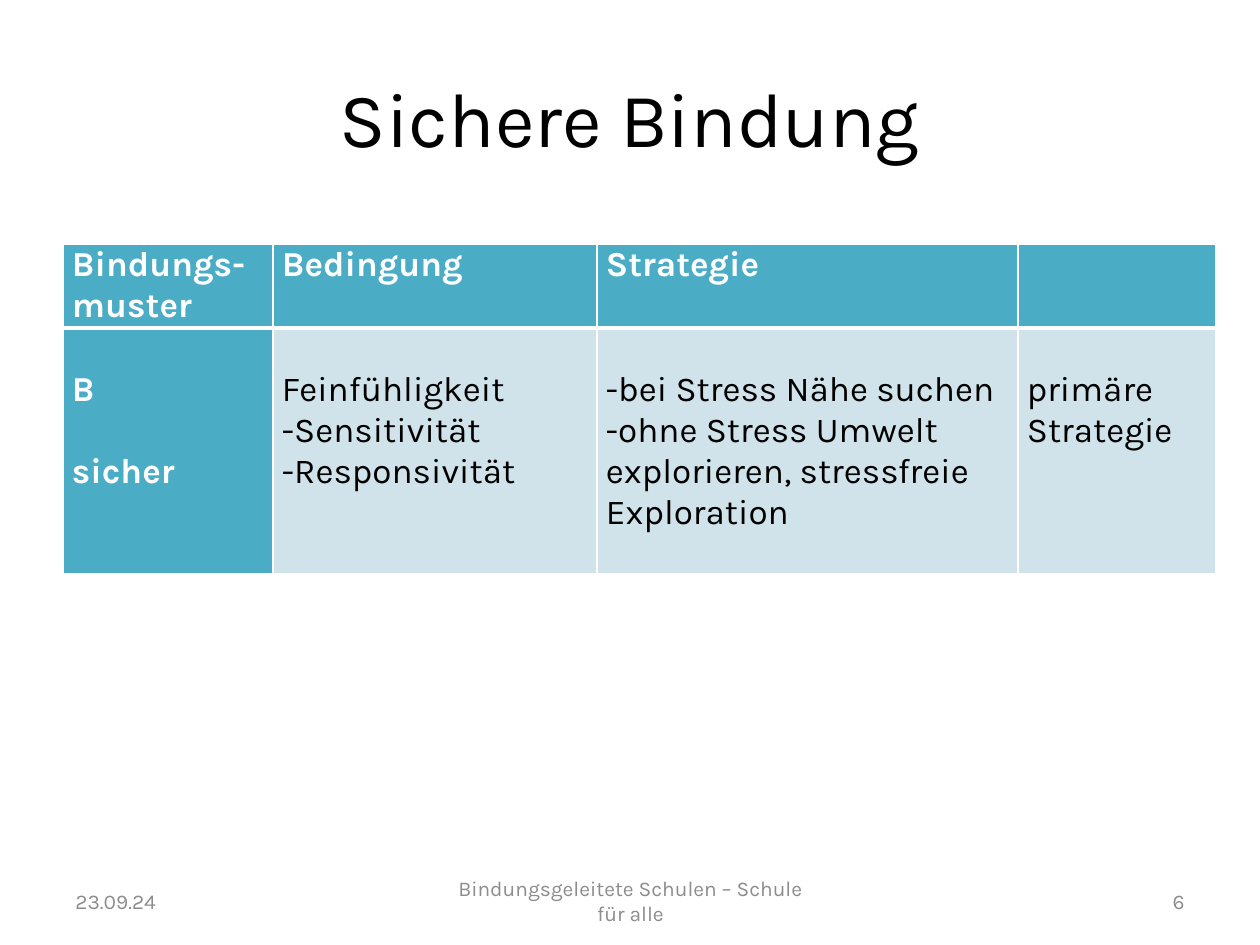
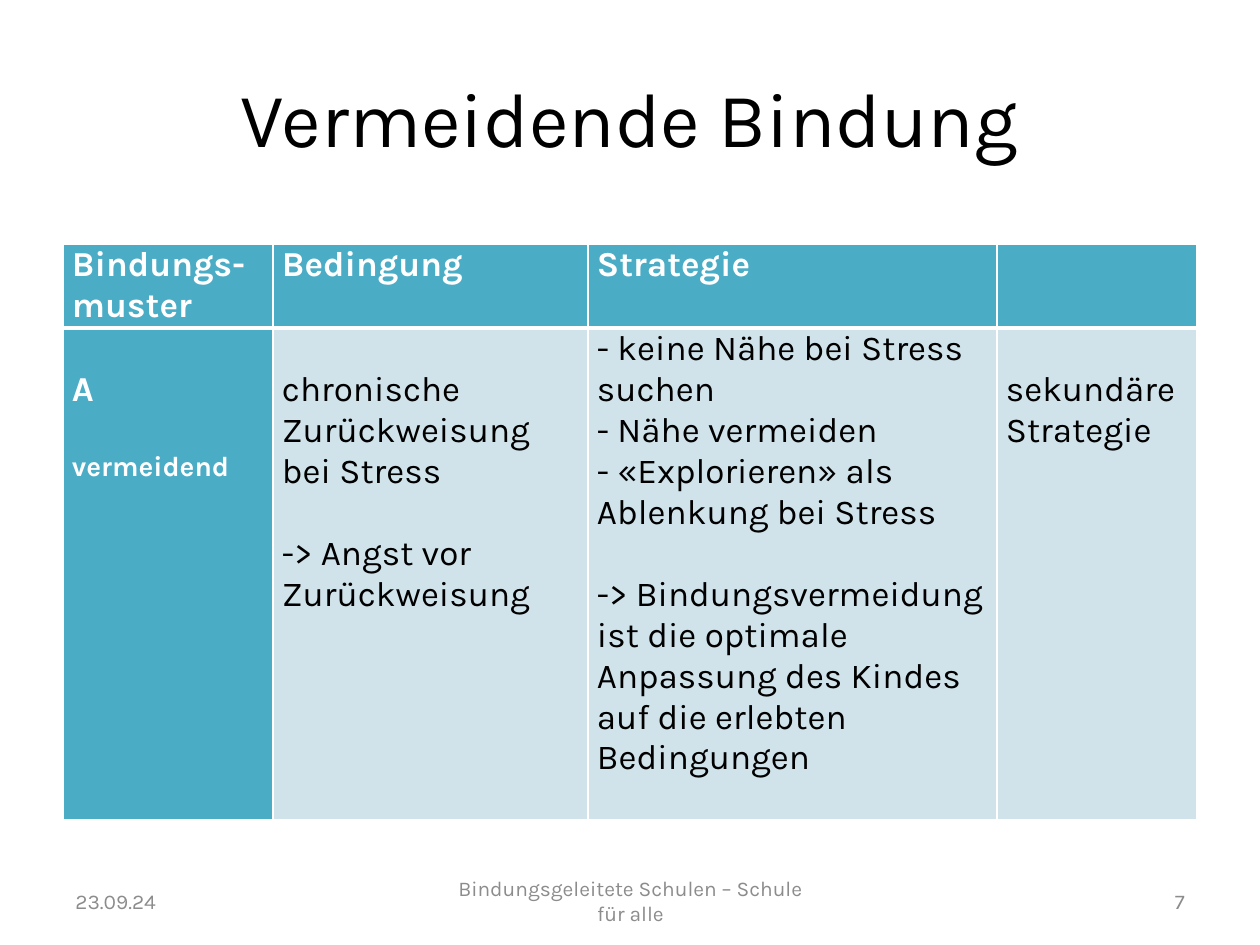
from dataclasses import dataclass

from lxml import etree
from pptx import Presentation
from pptx.dml.color import RGBColor
from pptx.enum.text import MSO_ANCHOR, PP_ALIGN
from pptx.oxml.ns import qn
from pptx.util import Emu, Pt

LEFT, CENTER, RIGHT = PP_ALIGN.LEFT, PP_ALIGN.CENTER, PP_ALIGN.RIGHT
MIDDLE = MSO_ANCHOR.MIDDLE

PX_PER_INCH = 126
FONT = "Karla"
WHITE, BLACK, GREY = "FFFFFF", "000000", "8C8C8C"
TEAL, PALE = "4BACC6", "D0E3EA"

LINE = 41  # height of one line of table text
INSET = 9
TITLE_BOX = (63, 38, 1134, 158)
TABLE_LEFT, TABLE_TOP = 63, 244
HEADER_HEIGHT = 2 * LINE
HEADINGS = ("Bindungs-muster", "Bedingung", "Strategie", "")
DATE = "23.09.24"
FOOTER = "Bindungsgeleitete Schulen – Schule für alle"


@dataclass
class Line:
    text: str
    size: int = 20
    gap: int = 0  # free lines above


@dataclass
class Cell:
    lines: list[Line]
    top: int = 1  # free lines at the top of the cell


@dataclass
class Pattern:
    title: str
    number: int
    widths: tuple[int, ...]
    body_lines: int
    cells: list[Cell]


PATTERNS = [
    Pattern("Sichere Bindung", 6, (210, 324, 421, 198), 6, [
        Cell([Line("B"), Line("sicher", gap=1)]),
        Cell([Line("Feinfühligkeit"), Line("-Sensitivität"), Line("-Responsivität")]),
        Cell([Line("-bei Stress Nähe suchen"),
              Line("-ohne Stress Umwelt explorieren, stressfreie Exploration")]),
        Cell([Line("primäre"), Line("Strategie")]),
    ]),
    Pattern("Vermeidende Bindung", 7, (210, 315, 409, 200), 12, [
        Cell([Line("A"), Line("vermeidend", size=16, gap=1)]),
        Cell([Line("chronische Zurückweisung bei Stress"),
              Line("-> Angst vor Zurückweisung", gap=1)]),
        Cell([Line("- keine Nähe bei Stress suchen"),
              Line("- Nähe vermeiden"),
              Line("- «Explorieren» als Ablenkung bei Stress"),
              Line("-> Bindungsvermeidung ist die optimale Anpassung des Kindes "
                   "auf die erlebten Bedingungen", gap=1)], top=0),
        Cell([Line("sekundäre"), Line("Strategie")]),
    ]),
]


def px(n: int) -> Emu:
    return Emu(round(n * 914400 / PX_PER_INCH))


def rgb(color: str) -> RGBColor:
    return RGBColor.from_string(color)


def write(p, text: str, size: int, color: str, bold: bool = False, align=LEFT) -> None:
    p.alignment = align
    r = p.add_run()
    r.text = text
    for name, value in {"name": FONT, "size": Pt(size), "bold": bold}.items():
        setattr(r.font, name, value)
    r.font.color.rgb = rgb(color)


def add_title(s, text: str) -> None:
    sp = s.shapes.title
    for name, value in zip(("left", "top", "width", "height"), TITLE_BOX):
        setattr(sp, name, px(value))
    sp.text_frame.vertical_anchor = MIDDLE
    write(sp.text_frame.paragraphs[0], text, 44, BLACK, align=CENTER)


def add_footers(s, number: int) -> None:
    for text, left, width, align in ((DATE, 63, 294, LEFT), (FOOTER, 431, 399, CENTER),
                                     (str(number), 903, 294, RIGHT)):
        tf = s.shapes.add_textbox(px(left), px(876), px(width), px(50)).text_frame
        tf.word_wrap = True
        tf.vertical_anchor = MIDDLE
        write(tf.paragraphs[0], text, 12, GREY, align=align)


def add_borders(cell, widths: dict[str, int]) -> None:
    tc_pr = cell._tc.get_or_add_tcPr()
    for side, width in widths.items():
        ln = etree.SubElement(tc_pr, qn(f"a:ln{side}"), w=str(Pt(width)))
        fill = etree.SubElement(ln, qn("a:solidFill"))
        etree.SubElement(fill, qn("a:srgbClr"), val=WHITE)


def fill_cell(cell, content: Cell, fill: str, color: str, bold: bool,
              is_header: bool) -> None:
    add_borders(cell, {"L": 1, "R": 1, "T": 1 if is_header else 3,
                       "B": 3 if is_header else 1})
    cell.fill.solid()
    cell.fill.fore_color.rgb = rgb(fill)
    margins = {"left": INSET, "right": INSET, "top": content.top * LINE, "bottom": 0}
    for side, value in margins.items():
        setattr(cell, f"margin_{side}", px(value))
    tf = cell.text_frame
    for i, line in enumerate(content.lines):
        p = tf.add_paragraph() if i else tf.paragraphs[0]
        if line.gap:
            p.space_before = px(line.gap * LINE)
        write(p, line.text, line.size, color, bold)


def add_pattern_table(s, pattern: Pattern) -> None:
    heights = (HEADER_HEIGHT, pattern.body_lines * LINE)
    table = s.shapes.add_table(2, len(HEADINGS), px(TABLE_LEFT), px(TABLE_TOP),
                               px(sum(pattern.widths)), px(sum(heights))).table
    table.horz_banding = False
    for row, height in zip(table.rows, heights):
        row.height = px(height)
    for i, (heading, width) in enumerate(zip(HEADINGS, pattern.widths)):
        table.columns[i].width = px(width)
        header = Cell([Line(heading)] if heading else [], top=0)
        fill_cell(table.cell(0, i), header, TEAL, WHITE, True, True)
        is_label = i == 0
        fill_cell(table.cell(1, i), pattern.cells[i], TEAL if is_label else PALE,
                  WHITE if is_label else BLACK, is_label, False)


def main() -> None:
    prs = Presentation()
    prs.slide_width, prs.slide_height = px(1260), px(945)
    title_only = prs.slide_layouts[5]
    for pattern in PATTERNS:
        s = prs.slides.add_slide(title_only)
        add_title(s, pattern.title)
        add_footers(s, pattern.number)
        add_pattern_table(s, pattern)
    prs.save("out.pptx")


if __name__ == "__main__":
    main()
